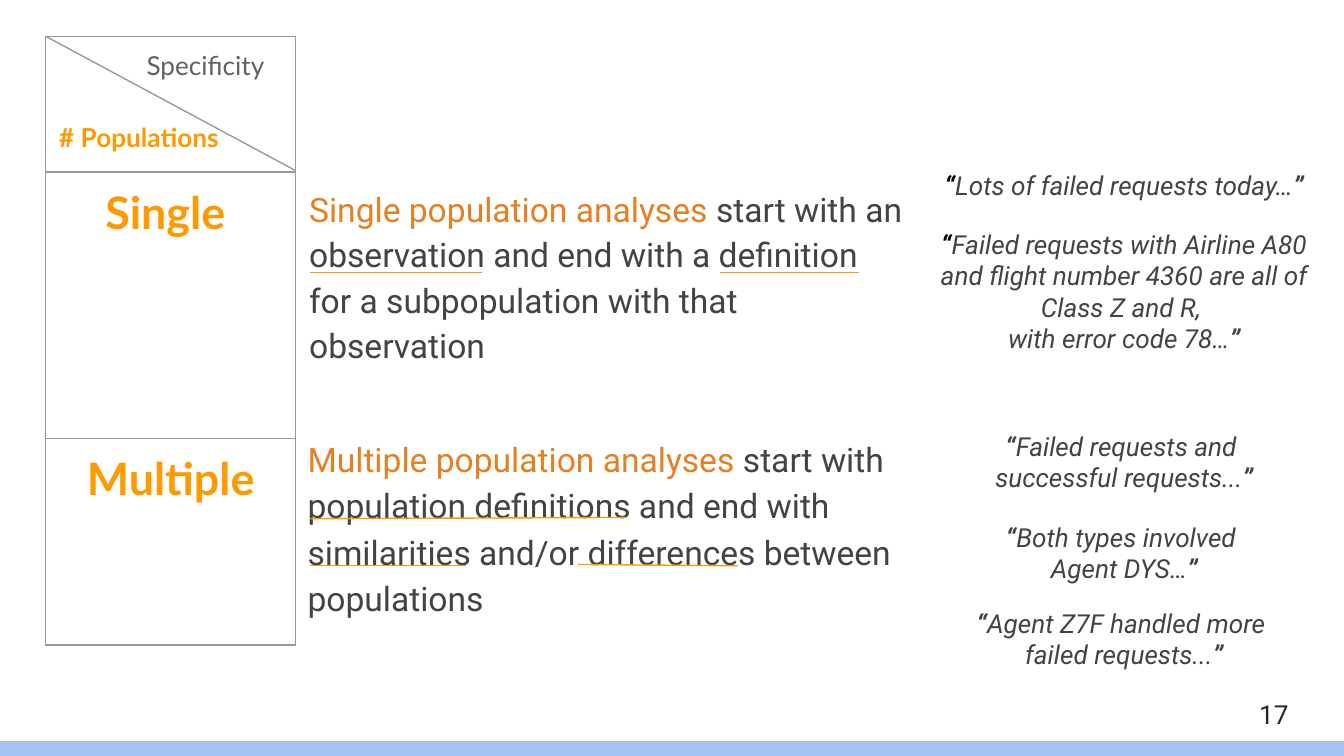
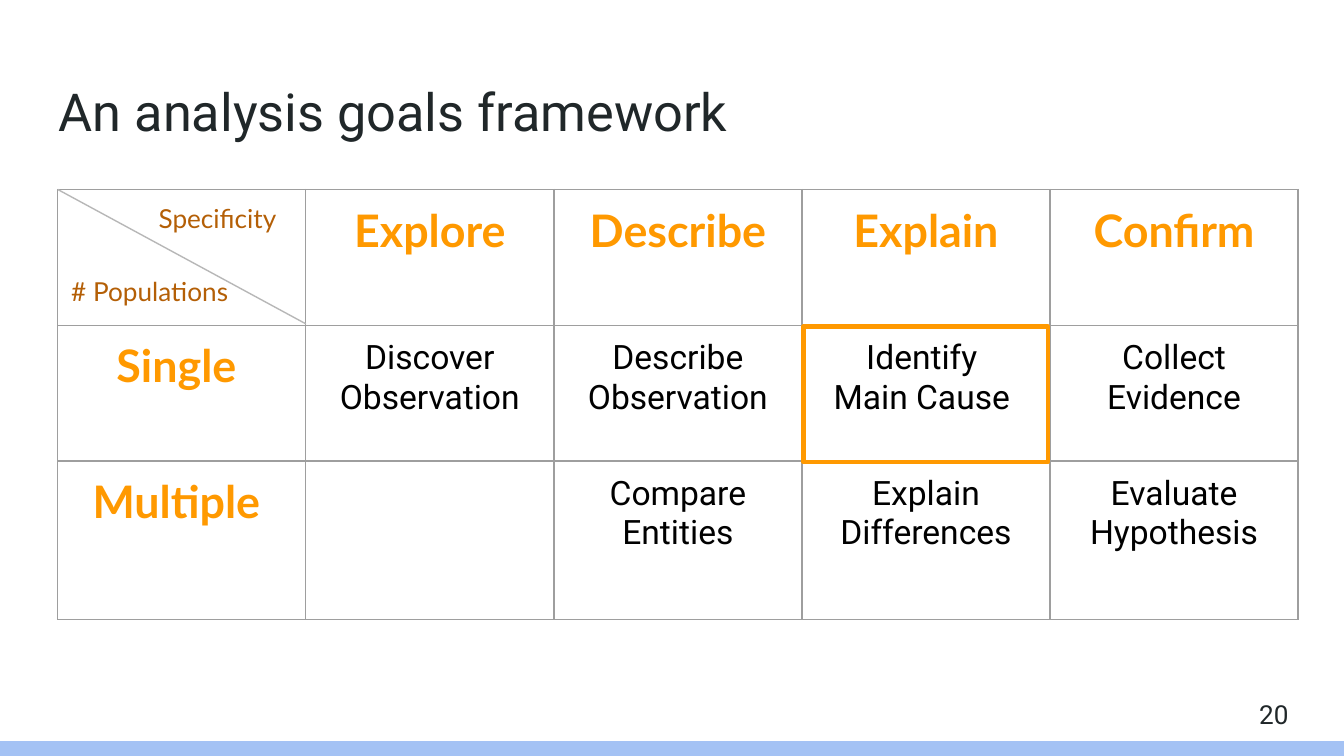
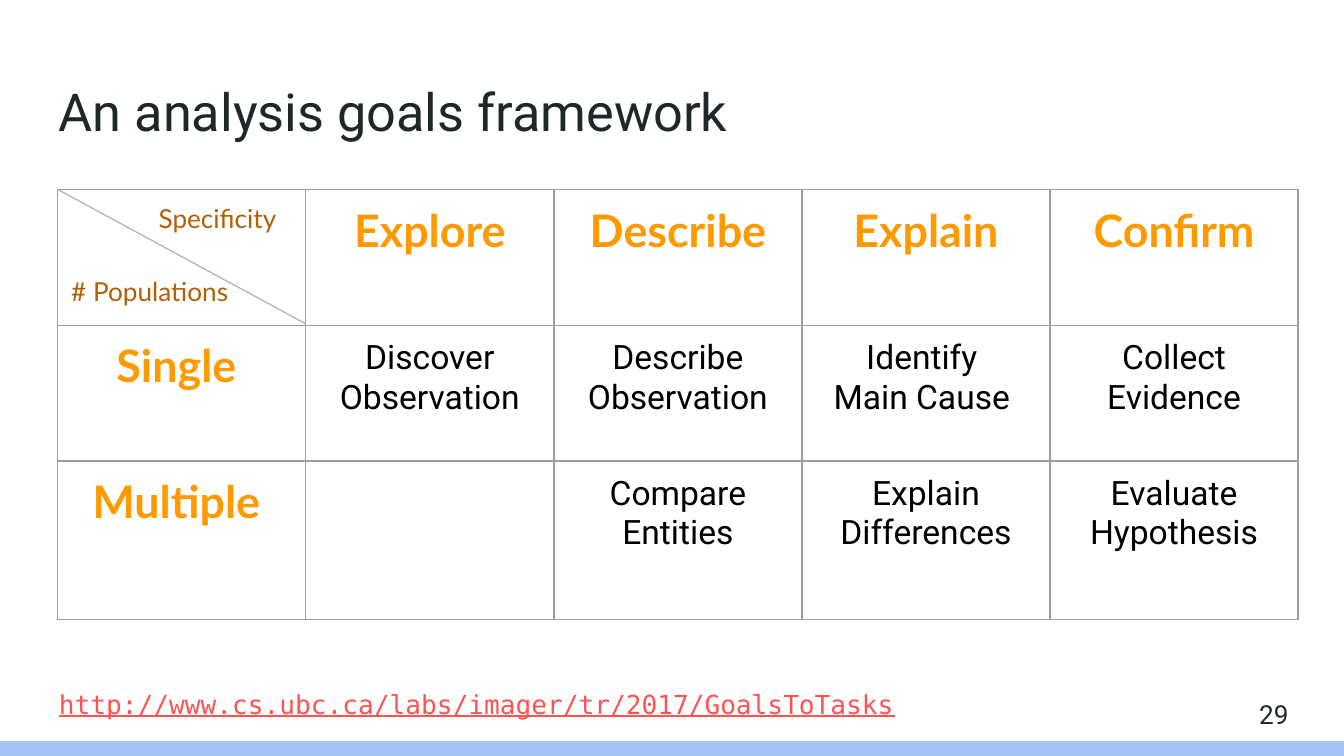
from lxml import etree
from pptx import Presentation
from pptx.dml.color import RGBColor
from pptx.enum.shapes import MSO_CONNECTOR, MSO_SHAPE
from pptx.enum.text import MSO_ANCHOR, PP_ALIGN
from pptx.oxml import parse_xml
from pptx.oxml.ns import nsdecls, qn
from pptx.util import Inches, Pt

BAND = RGBColor(0xA4, 0xC2, 0xF4)
INK = RGBColor(0x20, 0x27, 0x29)
BLACK = RGBColor(0, 0, 0)
BODY = RGBColor(0x43, 0x43, 0x43)
LABEL_GREY = RGBColor(0x61, 0x61, 0x61)
ORANGE = RGBColor(0xFF, 0x99, 0x00)
DARK_ORANGE = RGBColor(0xE6, 0x7E, 0x22)
BROWN = RGBColor(0xB4, 0x5F, 0x06)
LINK_RED = RGBColor(0xFF, 0x52, 0x52)
EDGE = RGBColor(0x99, 0x99, 0x99)
GRID_EDGE = RGBColor(0x9E, 0x9E, 0x9E)
DIAGONAL = RGBColor(0xB7, 0xB7, 0xB7)

W = 10
H = W * 9 / 16
PAD = Inches(0.1)
PLAIN_TABLE = "{2D5ABB26-0587-4C30-8999-92F81FD0307C}"


def write(tf, *paragraphs, font="Roboto", size=14, color=INK, bold=False, italic=False,
          underline=False, align=PP_ALIGN.LEFT, spacing=None, before=0, anchor=MSO_ANCHOR.TOP):
    """Fill a frame; a paragraph is a list of runs, each a string or (string, overrides)."""
    tf.word_wrap = True
    tf.vertical_anchor = anchor
    tf.margin_left = tf.margin_right = tf.margin_top = tf.margin_bottom = PAD
    for i, runs in enumerate(paragraphs):
        p = tf.add_paragraph() if i else tf.paragraphs[0]
        p.alignment = align
        if spacing:
            p.line_spacing = spacing
        if i and before:
            p.space_before = Pt(before)
        for run in [runs] if isinstance(runs, str) else runs:
            text, own = (run, {}) if isinstance(run, str) else run
            # a line break inside a run becomes a:br
            for n, part in enumerate(text.split("\n")):
                if n:
                    p.add_line_break()
                r = p.add_run()
                r.text = part
                r.font.name, r.font.size = font, Pt(size)
                r.font.bold = own.get("bold", bold)
                r.font.italic, r.font.underline = italic, underline
                r.font.color.rgb = own.get("color", color)


def add_line(s, x1, y1, x2, y2, color):
    line = s.shapes.add_connector(MSO_CONNECTOR.STRAIGHT, *map(Inches, (x1, y1, x2, y2)))
    line.line.color.rgb, line.line.width = color, Pt(0.75)
    etree.SubElement(line._element.spPr, qn("a:effectLst"))


prs = Presentation()
prs.slide_width, prs.slide_height = Inches(W), Inches(H)

# Shared band, page number and title
slides = []
for number, title in (("17", ""), ("20", "An analysis goals framework"),
                      ("29", "An analysis goals framework")):
    s = prs.slides.add_slide(prs.slide_layouts[6])
    slides.append(s)
    band = s.shapes.add_shape(MSO_SHAPE.RECTANGLE, 0, Inches(H - 0.11), Inches(W), Inches(0.11))
    band.shadow.inherit = False
    band.fill.solid()
    band.fill.fore_color.rgb = BAND
    band.line.fill.background()
    if title:
        tb = s.shapes.add_textbox(Inches(0.34), Inches(0.49), Inches(9.32), Inches(0.63))
        write(tb.text_frame, title, size=28)
    tb = s.shapes.add_textbox(Inches(9.27), Inches(5.1), Inches(0.6), Inches(0.43))
    write(tb.text_frame, number, anchor=MSO_ANCHOR.MIDDLE)
populations, framework, summary = slides

# Tables: (slide, left, top, column widths, row heights, rows, ruled columns,
#          edge colour, diagonal colour, Specificity colour, # Populations format)
GRID_LEFT, GRID_TOP = 0.43, 1.41
GRID_COLS, GRID_ROWS = [9.23 / 5] * 5, [1.01, 1.01, 1.18]
GRID = [
    ["", "Explore", "Describe", "Explain", "Confirm"],
    ["Single ", "Discover Observation", "Describe Observation", "Identify \nMain Cause ",
     "Collect Evidence"],
    ["Multiple ", "", "Compare Entities", "Explain Differences", "Evaluate Hypothesis"],
]
grid_format = (GRID_LEFT, GRID_TOP, GRID_COLS, GRID_ROWS, GRID, 5, GRID_EDGE, DIAGONAL,
               BROWN, {"color": BROWN})
tables = [
    (populations, 0.34, 0.27, [1.86, 4.66, 2.98], [1.01, 1.98, 1.54],
     [["", "", ""], ["Single ", "", ""], ["Multiple", "", ""]], 1, EDGE, EDGE,
     LABEL_GREY, {"color": ORANGE, "bold": True}),
    (framework, *grid_format),
    (summary, *grid_format),
]
for s, left, top, widths, heights, rows, ruled, edge, diagonal, spec_color, pop_format in tables:
    frame = s.shapes.add_table(len(heights), len(widths), Inches(left), Inches(top),
                               Inches(sum(widths)), Inches(sum(heights)))
    table = frame.table
    table.first_row = table.horz_banding = False
    table._tbl.tblPr.find(qn("a:tableStyleId")).text = PLAIN_TABLE
    for column, width in zip(table.columns, widths):
        column.width = Inches(width)
    for row, height in zip(table.rows, heights):
        row.height = Inches(height)
    for i, texts in enumerate(rows):
        for j, text in enumerate(texts):
            cell = table.cell(i, j)
            cell.margin_left = cell.margin_right = cell.margin_top = cell.margin_bottom = PAD
            if j < ruled:
                for side in ("lnL", "lnR", "lnT", "lnB"):
                    cell._tc.get_or_add_tcPr().append(parse_xml(
                        f'<a:{side} {nsdecls("a")} w="{Pt(0.75)}"><a:solidFill>'
                        f'<a:srgbClr val="{edge}"/></a:solidFill></a:{side}>'))
            cell.fill.background()
            if i == j == 0:
                write(cell.text_frame, [("Specificity", {"color": spec_color})],
                      [("# Populations", pop_format)], font="Lato", before=22)
                p = cell.text_frame.paragraphs[0]
                p._p.get_or_add_pPr().set("marL", str(Inches(0.65)))
            elif text and 0 in (i, j):
                write(cell.text_frame, text, font="Lato", size=24, color=ORANGE, bold=True,
                      align=PP_ALIGN.CENTER)
            elif text:
                write(cell.text_frame, text, size=18, color=BLACK, align=PP_ALIGN.CENTER)
    if s is populations:
        write(table.cell(1, 1).text_frame,
              [("Single population analyses ", {"color": DARK_ORANGE}),
               "start with an observation and end with a definition "
               "for a subpopulation with that observation"],
              size=18, color=BODY, spacing=1.15)
    add_line(s, left, top, left + widths[0], top + heights[0] - 0.01, diagonal)

# Single and multiple populations
tb = populations.shapes.add_textbox(Inches(2.19), Inches(3.12), Inches(4.56), Inches(1.61))
write(tb.text_frame,
      [("Multiple population analyses", {"color": DARK_ORANGE}),
       " start with population definitions and end with similarities "
       "and/or differences between populations"],
      size=18, color=BODY, spacing=1.15)

for x1, y1, x2, y2 in ((2.31, 2.03, 3.59, 2.03), (5.36, 2.03, 6.39, 2.03),
                       (2.31, 3.86, 4.66, 3.85), (2.31, 4.21, 3.47, 4.21),
                       (4.3, 4.2, 5.49, 4.21)):
    add_line(populations, x1, y1, x2, y2, ORANGE)

quotes = [
    (1.16, 0.94, BLACK, ["Lots of failed requests today…"]),
    (1.6, 1.07, BLACK, ["Failed requests with Airline A80 and flight number 4360 "
                        "are all of Class Z and R, ", "with error code 78…"]),
    (3.1, 0.68, BODY, ["Failed requests and ", "successful requests..."]),
    (3.78, 0.64, BODY, ["Both types involved ", "Agent DYS…"]),
    (4.42, 0.64, BODY, ["Agent Z7F handled more ", "failed requests..."]),
]
for top, height, mark_color, lines in quotes:
    paragraphs = [[line] for line in lines]
    paragraphs[0].insert(0, ("“", {"bold": True, "color": mark_color}))
    paragraphs[-1].append(("”", {"bold": True}))
    tb = populations.shapes.add_textbox(Inches(6.87), Inches(top), Inches(2.99), Inches(height))
    write(tb.text_frame, *paragraphs, color=BODY, italic=True, align=PP_ALIGN.CENTER)

# Highlighted goal
goal = framework.shapes.add_shape(
    MSO_SHAPE.RECTANGLE, Inches(GRID_LEFT + sum(GRID_COLS[:3]) + 0.01),
    Inches(GRID_TOP + GRID_ROWS[0] + 0.01), Inches(1.82), Inches(GRID_ROWS[1]))
goal.shadow.inherit = False
goal.fill.background()
goal.line.color.rgb, goal.line.width = ORANGE, Pt(2.25)

# Web address
tb = summary.shapes.add_textbox(Inches(0.34), Inches(4.99), Inches(7.25), Inches(0.58))
write(tb.text_frame, "http://www.cs.ubc.ca/labs/imager/tr/2017/GoalsToTasks",
      font="DejaVu Sans Mono", color=LINK_RED, underline=True, spacing=1.15)

prs.save("out.pptx")
